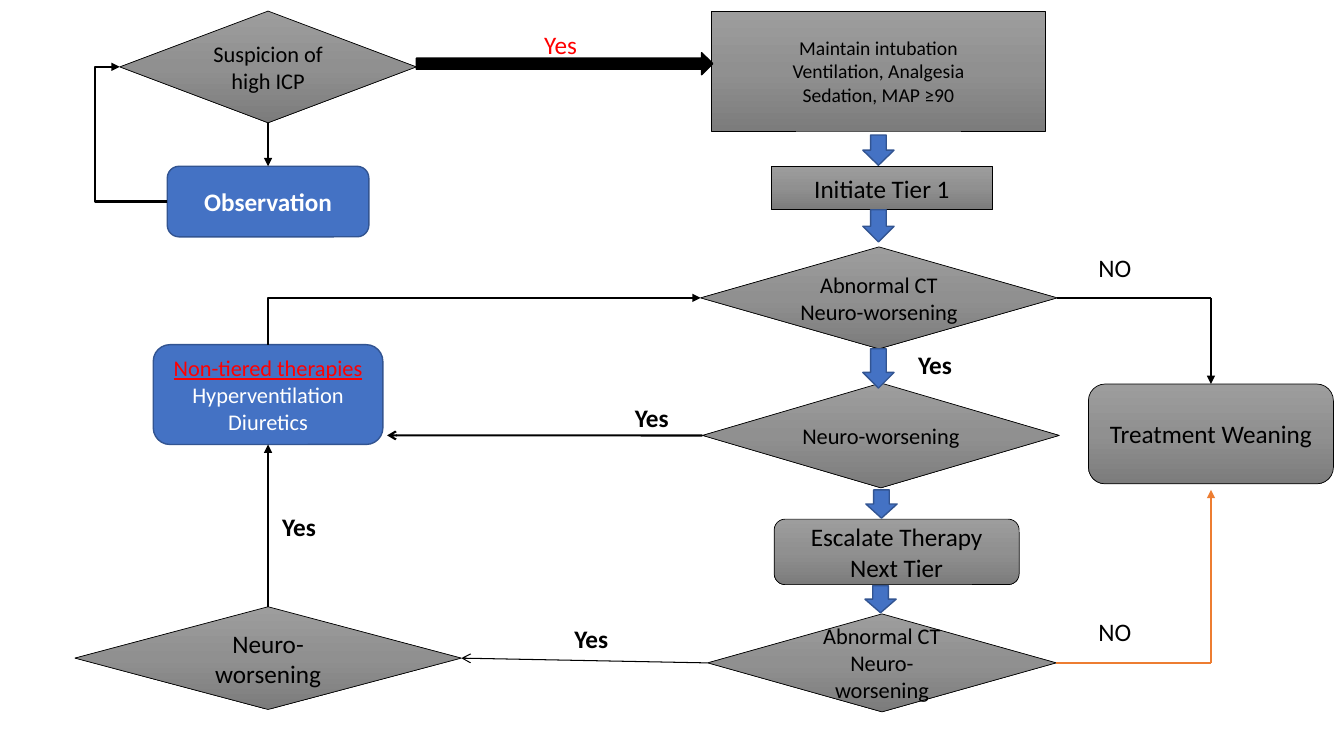
from copy import deepcopy

from lxml.etree import SubElement
from pptx import Presentation
from pptx.dml.color import RGBColor
from pptx.enum.shapes import MSO_CONNECTOR, MSO_SHAPE
from pptx.enum.text import MSO_ANCHOR, MSO_AUTO_SIZE, PP_ALIGN
from pptx.oxml.ns import qn
from pptx.util import Pt

COLORS = {
    "black": "000000", "white": "FFFFFF", "red": "FF0000", "blue": "4472C4",
    "blue edge": "325491", "orange": "ED7D31",
}
GRAY_STOPS = [(0, "9D9D9D"), (0.5, "909090"), (1, "7C7C7C")]
DIAMOND, RECTANGLE, ROUNDED = MSO_SHAPE.DIAMOND, MSO_SHAPE.RECTANGLE, MSO_SHAPE.ROUNDED_RECTANGLE
TOP, LEFT, BOTTOM, RIGHT = range(4)

# name: preset, (left, top, width, height), text size, lines
GRAY_STEPS = {
    "suspicion": (DIAMOND, (85.6, 7.9, 211.8, 79.8), 16, ["Suspicion of high ICP"]),
    "maintain": (RECTANGLE, (508.3, 7.9, 238.4, 85.7), 14,
                 ["Maintain intubation", "Ventilation, Analgesia", "Sedation, MAP ≥90"]),
    "tier 1": (RECTANGLE, (550.8, 118.8, 158.4, 31), 18, ["Initiate Tier 1"]),
    "abnormal": (DIAMOND, (500.4, 176.4, 254.9, 72.8), 16, ["Abnormal CT", "Neuro-worsening"]),
    "weaning": (ROUNDED, (777.5, 274.3, 175, 71.3), 18, ["Treatment Weaning"]),
    "worsening": (DIAMOND, (501.8, 273.6, 254.9, 74.9), 16, ["Neuro-worsening"]),
    "escalate": (ROUNDED, (553, 370.8, 175, 46.8), 18, ["Escalate Therapy", "Next Tier"]),
    "recheck": (DIAMOND, (505.5, 438.5, 249, 70), 16, ["Abnormal CT", "Neuro-worsening"]),
    "late worsening": (DIAMOND, (53.5, 433.4, 276, 73.4), 18, ["Neuro-worsening"]),
}
DOWN_ARROWS = [(616.3, 96.5, 21.6), (616.3, 149.8, 23), (616.3, 249.1, 28.1),
               (618.5, 349.9, 20.2), (617.8, 418.3, 19.4)]
WEANING_CORNER, RECHECK_CORNER = (865, 212.8), (865, 473.5)

# start, end, color, width, arrowhead; an end is a point or a (step, side) pair
LINKS = [
    (("abnormal", RIGHT), WEANING_CORNER, "black", 1.5, None),
    (WEANING_CORNER, ("weaning", TOP), "black", 1.5, "triangle"),
    (RECHECK_CORNER, (865, 349.9), "orange", 1.5, "triangle"),
    (("recheck", RIGHT), RECHECK_CORNER, "orange", 1.5, None),
    (("recheck", LEFT), ("late worsening", RIGHT), "black", 0.75, "arrow"),
    (("late worsening", TOP), ("therapies", BOTTOM), "black", 1.5, "triangle"),
    (("worsening", LEFT), (276.5, 311), "black", 1.5, "arrow"),
    (("suspicion", BOTTOM), ("observation", TOP), "black", 1.5, "triangle"),
]
# text, (left, top, width), color, bold
LABELS = [
    ("Yes", (381.6, 17.3, 52.6), "red", False),
    ("Yes", (648.7, 246.2, 46), "black", True),
    ("NO", (777.5, 176.4, 43.2), "black", False),
    ("NO", (777.5, 437, 64.8), "black", False),
    ("Yes", (403.2, 441.4, 52.6), "black", True),
    ("Yes", (194.4, 361.4, 52.6), "black", True),
    ("Yes", (446.4, 283.7, 52.6), "black", True),
]


def rgb(name):
    return RGBColor.from_string(COLORS[name])


class Flowchart:
    def __init__(self, page):
        self.page = page
        self.steps = {}

    def fill_text(self, frame, lines, alignment, color="black", **formats):
        """Each line is a string or a (string, own formats) pair."""
        for index, line in enumerate(lines):
            words, own = (line, {}) if isinstance(line, str) else line
            para = frame.paragraphs[0] if index == 0 else frame.add_paragraph()
            para.alignment = alignment
            span = para.add_run()
            span.text = words
            values = {"name": "Calibri", "color": color, **formats, **own}
            span.font.color.rgb = rgb(values.pop("color"))
            for key, value in values.items():
                setattr(span.font, key, value)

    def shape(self, preset, place, fill=None, edge="black", width=0.5):
        """Without a fill name the shape gets the gray gradient."""
        box = self.page.shapes.add_shape(preset, *map(Pt, place))
        box.shadow.inherit = False
        box.line.color.rgb = rgb(edge)
        box.line.width = Pt(width)
        if fill:
            box.fill.solid()
            box.fill.fore_color.rgb = rgb(fill)
        else:
            box.fill.gradient()
            box.fill.gradient_angle = 270
            stop_list = box.element.xpath(".//a:gsLst")[0]
            stop_list.append(deepcopy(stop_list[-1]))
            for stop, (position, color) in zip(box.fill.gradient_stops, GRAY_STOPS):
                stop.position = position
                stop.color.rgb = RGBColor.from_string(color)
        return box

    def step(self, name, preset, place, size, lines, color="black", bold=False, **look):
        box = self.shape(preset, place, **look)
        box.text_frame.word_wrap = True
        box.text_frame.vertical_anchor = MSO_ANCHOR.MIDDLE
        self.fill_text(box.text_frame, lines, PP_ALIGN.CENTER, color, size=Pt(size), bold=bold)
        self.steps[name] = box

    def label(self, words, place, color, bold):
        box = self.page.shapes.add_textbox(*map(Pt, (*place, 28.8)))
        box.text_frame.word_wrap = True
        box.text_frame.auto_size = MSO_AUTO_SIZE.SHAPE_TO_FIT_TEXT
        self.fill_text(box.text_frame, [words], PP_ALIGN.LEFT, color, size=Pt(18), bold=bold)

    def connector(self, kind, start, end, color="black", width=1.5, head="triangle"):
        link = self.page.shapes.add_connector(kind, *map(Pt, (*start, *end)))
        link.line.color.rgb = rgb(color)
        link.line.width = Pt(width)
        properties = link.element.spPr
        if head:
            SubElement(properties.find(qn("a:ln")), qn("a:tailEnd"), type=head)
        SubElement(properties, qn("a:effectLst"))
        return link

    def link(self, start, end, *look):
        joined = [isinstance(point[0], str) for point in (start, end)]
        points = [(0, 0) if join else point for join, point in zip(joined, (start, end))]
        line = self.connector(MSO_CONNECTOR.STRAIGHT, *points, *look)
        for join, point, attach in zip(joined, (start, end), (line.begin_connect, line.end_connect)):
            if join:
                attach(self.steps[point[0]], point[1])

    def loop_back(self, start, end, bend):
        """Leave sideways and return; bend is the turn's place as a share of the width."""
        elbow = self.connector(MSO_CONNECTOR.ELBOW, start, end)
        guides = elbow.element.xpath(".//a:prstGeom")[0].get_or_add_avLst()
        SubElement(guides, qn("a:gd"), name="adj1", fmla=f"val {round(bend * 100000)}")

    def up_then_right(self, start, end):
        """A single-bend elbow, laid out on its side and turned a quarter."""
        middle_x, middle_y = (start[0] + end[0]) / 2, (start[1] + end[1]) / 2
        half_run, half_rise = (end[0] - start[0]) / 2, (start[1] - end[1]) / 2
        elbow = self.connector(MSO_CONNECTOR.ELBOW,
                               (middle_x + half_rise, middle_y + half_run),
                               (middle_x - half_rise, middle_y - half_run))
        elbow.element.xpath(".//a:prstGeom")[0].set("prst", "bentConnector2")
        elbow.element.xpath(".//a:xfrm")[0].set("rot", str(90 * 60000))


def main():
    deck = Presentation()
    deck.slide_width, deck.slide_height = Pt(960), Pt(540)
    chart = Flowchart(deck.slides.add_slide(deck.slide_layouts[6]))
    blue = {"fill": "blue", "edge": "blue edge", "width": 1}

    for name, details in GRAY_STEPS.items():
        chart.step(name, *details)
    chart.step("observation", ROUNDED, (119.5, 118.8, 144, 50.4), 18, ["Observation"],
               color="white", bold=True, **blue)
    chart.step("therapies", ROUNDED, (109.5, 246.2, 164, 71.3), 16,
               [("Non-tiered therapies", {"color": "red", "underline": True}),
                "Hyperventilation", "Diuretics"], color="white", **blue)

    chart.shape(MSO_SHAPE.RIGHT_ARROW, (297.4, 37.6, 211.7, 15.8), fill="black", width=1)
    for left, top, height in DOWN_ARROWS:
        chart.shape(MSO_SHAPE.DOWN_ARROW, (left, top, 22.3, height), **blue)
    for details in LINKS:
        chart.link(*details)
    chart.up_then_right((191.5, 246.2), (500.4, 212.8))
    chart.loop_back((119.5, 144), (85.6, 47.8), 1.53)
    for details in LABELS:
        chart.label(*details)
    deck.save("out.pptx")


if __name__ == "__main__":
    main()
